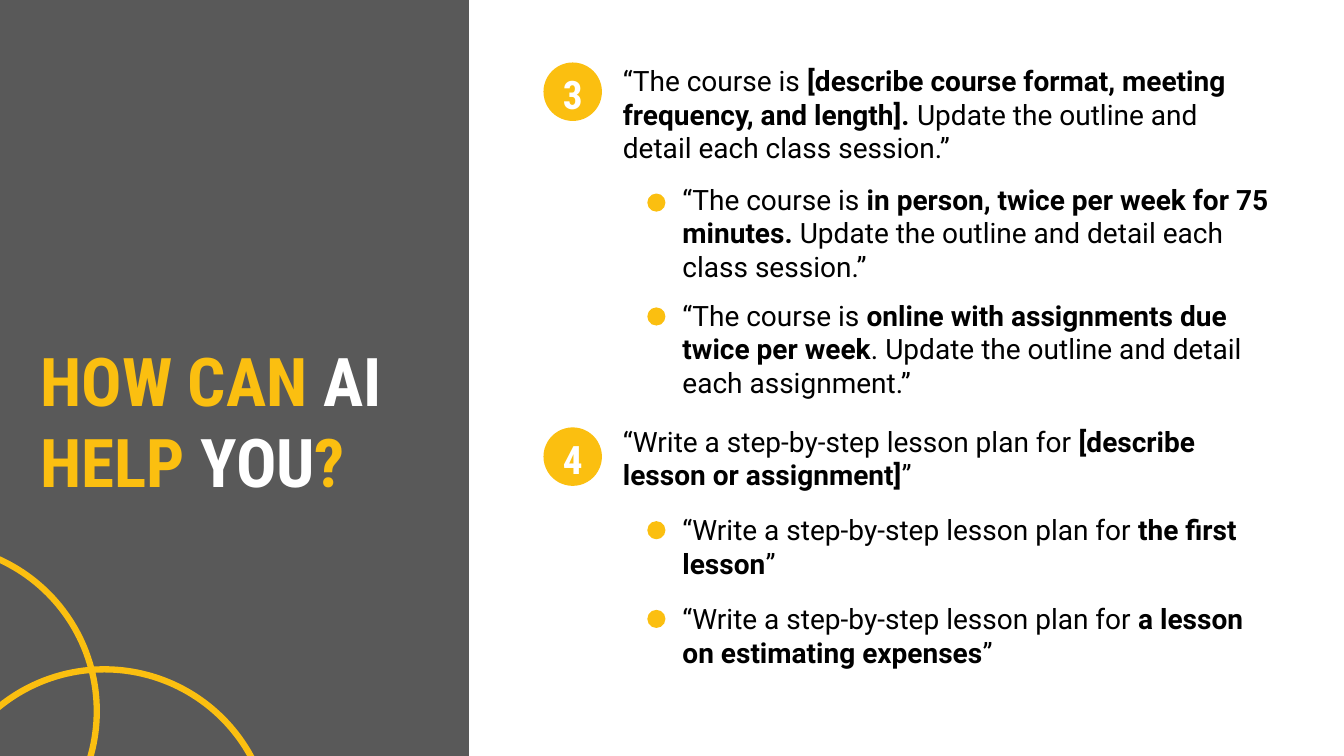
"""Build the slide of numbered course prompts beside a dark title panel."""
import pptx
import pptx.util
import pptx.dml.color
import pptx.enum.shapes
import pptx.enum.text

INCH = pptx.util.Inches
OVAL = pptx.enum.shapes.MSO_SHAPE.OVAL
ALIGN = pptx.enum.text.PP_ALIGN
ANCHOR = pptx.enum.text.MSO_ANCHOR

WIDE, HIGH = 13.33, 7.5
HUES = {"gold": "FBBF10", "gray": "595959", "white": "FFFFFF", "black": "000000"}
BODY, HEAD = "Roboto", "Roboto Condensed"

TITLE = [
    [("HOW CAN ", "gold"), ("AI", "white")],
    [("HELP ", "gold"), ("YOU", "white"), ("?", "gold")],
]
COURSE, PLAN = "“The course is ", "“Write a step-by-step lesson plan for "
# Each item: badge number, text top, marker top, lines, plain / bold / plain wording
ITEMS = [
    ("3", 0.58, 0.62, 3, (COURSE, "[describe course format, meeting frequency, and length]. ",
                          "Update the outline and detail each class session.”")),
    ("", 1.76, 1.92, 3, (COURSE, "in person, twice per week for 75 minutes.",
                         " Update the outline and detail each class session.”")),
    ("", 2.91, 3.05, 3, (COURSE, "online with assignments due twice per week",
                         ". Update the outline and detail each assignment.”")),
    ("4", 4.16, 4.24, 2, (PLAN, "[describe lesson or assignment]", "”")),
    ("", 5.04, 5.17, 2, (PLAN, "the first lesson", "”")),
    ("", 5.92, 6.05, 2, (PLAN, "a lesson on estimating expenses", "”")),
]
LEVELS = {
    True: {"mark": 5.39, "size": 0.58, "left": 6.08, "right": 12.59},
    False: {"mark": 6.42, "size": 0.18, "left": 6.67, "right": 12.69},
}
LINE, PAD = 0.34, 0.09
RINGS, RING = [(-2.35, 5.4), (-0.62, 6.64)], 3.31


def tint(hue):
    return pptx.dml.color.RGBColor.from_string(HUES[hue])


def write(para, text, face, size, hue, bold):
    run = para.add_run()
    run.text = text
    run.font.name = face
    run.font.size = pptx.util.Pt(size)
    run.font.bold = bold
    run.font.color.rgb = tint(hue)


def draw(shapes, kind, box, fill=None, line=None):
    shape = shapes.add_shape(kind, *map(INCH, box))
    shape.shadow.inherit = False
    if fill:
        shape.fill.solid()
        shape.fill.fore_color.rgb = tint(fill)
    else:
        shape.fill.background()
    if line:
        shape.line.color.rgb = tint(line)
        shape.line.width = pptx.util.Pt(4.5)
    else:
        shape.line.fill.background()
    return shape


def add_title(slide):
    title = slide.shapes.title
    title.left, title.top, title.width, title.height = map(INCH, (0.3, 3.32, 4.06, 1.72))
    slide.shapes._spTree.append(title._element)
    frame = title.text_frame
    frame.word_wrap = True
    frame.auto_size = pptx.enum.text.MSO_AUTO_SIZE.NONE
    frame.vertical_anchor = ANCHOR.TOP
    for n, row in enumerate(TITLE):
        para = frame.add_paragraph() if n else frame.paragraphs[0]
        para.alignment = ALIGN.LEFT
        for text, hue in row:
            write(para, text, HEAD, 48, hue, True)


def add_item(slide, label, top, mark, lines, parts):
    level = LEVELS[bool(label)]
    group = slide.shapes.add_group_shape().shapes
    left, size = level["left"], level["size"]
    box = (left, top, level["right"] - left, lines * LINE + PAD)
    frame = group.add_textbox(*map(INCH, box)).text_frame
    frame.word_wrap = True
    for n, text in enumerate(parts):
        write(frame.paragraphs[0], text, BODY, 20, "black", n == 1)
    dot = draw(group, OVAL, (level["mark"], mark, size, size), "gold")
    if label:
        face = dot.text_frame
        face.margin_left = face.margin_right = face.margin_bottom = 0
        face.margin_top = INCH(0.05)
        face.word_wrap = False
        face.vertical_anchor = ANCHOR.MIDDLE
        face.paragraphs[0].alignment = ALIGN.CENTER
        write(face.paragraphs[0], label, HEAD, 28, "white", True)


def main():
    deck = pptx.Presentation()
    deck.slide_width, deck.slide_height = INCH(WIDE), INCH(HIGH)
    slide = deck.slides.add_slide(deck.slide_layouts[5])
    panel = pptx.enum.shapes.MSO_SHAPE.RECTANGLE
    draw(slide.shapes, panel, (0, 0, 4.65, HIGH), "gray")
    for item in ITEMS:
        add_item(slide, *item)
    for left, top in RINGS:
        draw(slide.shapes, OVAL, (left, top, RING, RING), line="gold")
    add_title(slide)
    deck.save("out.pptx")


if __name__ == "__main__":
    main()
